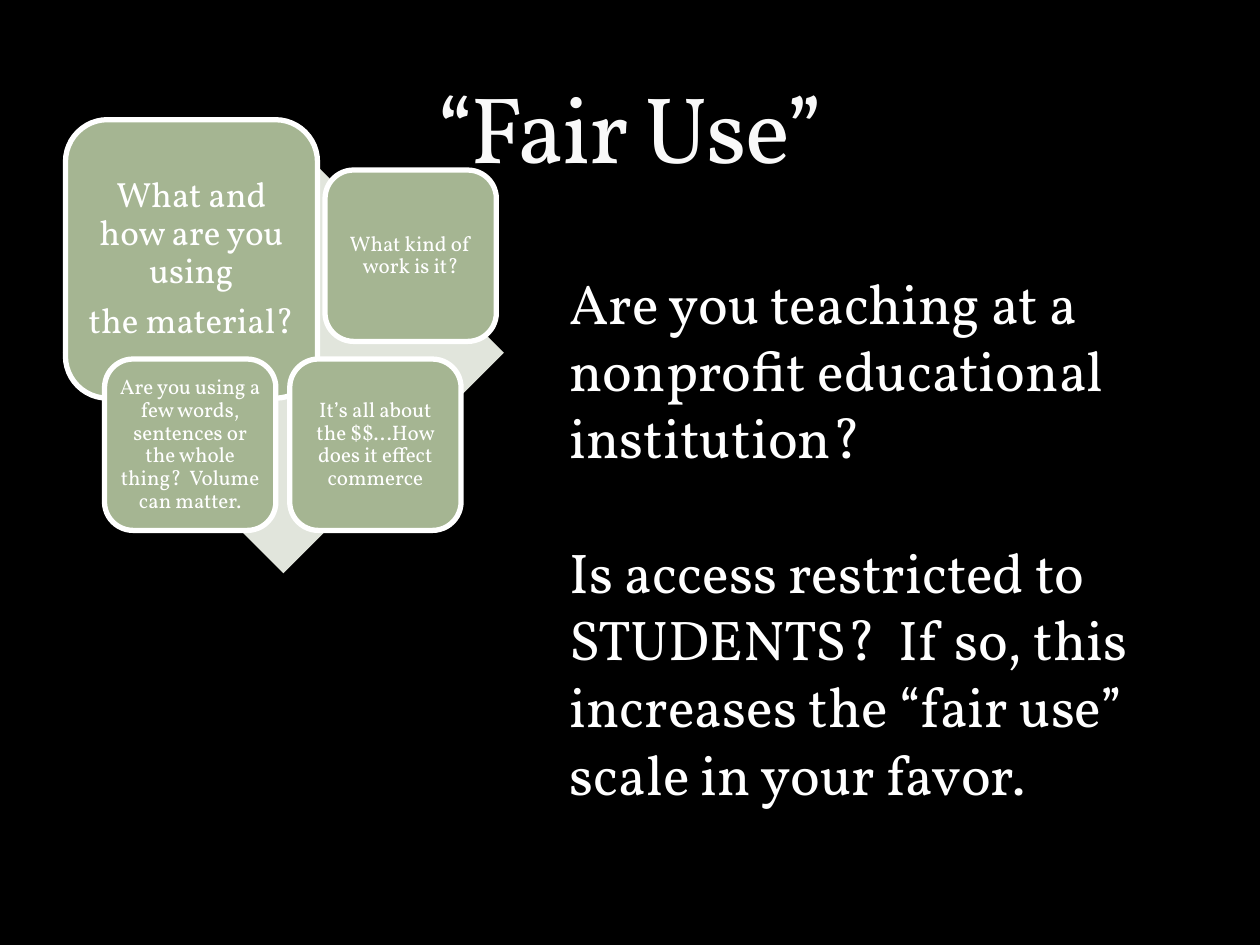
import lxml.etree
import pptx
import pptx.dml.color
import pptx.enum.shapes
import pptx.enum.text
import pptx.oxml.ns
import pptx.util

BLACK = pptx.dml.color.RGBColor(0x00, 0x00, 0x00)
WHITE = pptx.dml.color.RGBColor(0xFF, 0xFF, 0xFF)
OFF_WHITE = pptx.dml.color.RGBColor(0xF9, 0xF9, 0xF9)
SAGE = pptx.dml.color.RGBColor(0xA5, 0xB5, 0x92)
PALE_SAGE = pptx.dml.color.RGBColor(0xE1, 0xE5, 0xDC)

SHAPE = pptx.enum.shapes.MSO_SHAPE
ALIGN = pptx.enum.text.PP_ALIGN
ANCHOR = pptx.enum.text.MSO_ANCHOR


class FairUseSlide:
    font_name = "Vollkorn"
    columns, rows = 10, 7.5

    def __init__(self, deck):
        self.column = deck.slide_width / self.columns
        self.row = deck.slide_height / self.rows
        self.slide = deck.slides.add_slide(deck.slide_layouts[1])
        self.slide.background.fill.solid()
        self.slide.background.fill.fore_color.rgb = BLACK
        self.diagram = self.slide.shapes.add_group_shape()

    def place(self, left, top, width, height):
        return (round(left * self.column), round(top * self.row),
                round(width * self.column), round(height * self.row))

    def set_text(self, frame, paragraphs, size, color, align, anchor):
        frame.text = "\n".join(paragraphs)
        frame.word_wrap = True
        frame.auto_size = pptx.enum.text.MSO_AUTO_SIZE.NONE
        frame.vertical_anchor = anchor
        for paragraph in frame.paragraphs:
            paragraph.alignment = align
            paragraph.space_before = pptx.util.Pt(0)
            paragraph.font.name = self.font_name
            paragraph.font.size = pptx.util.Pt(size)
            paragraph.font.color.rgb = color

    def move(self, placeholder, area):
        (placeholder.left, placeholder.top,
         placeholder.width, placeholder.height) = self.place(*area)

    def title(self, heading, area):
        title = self.slide.shapes.title
        self.move(title, area)
        self.set_text(title.text_frame, [heading], 54, OFF_WHITE,
                      ALIGN.CENTER, ANCHOR.BOTTOM)
        for run in title.text_frame.paragraphs[0].runs:
            run._r.get_or_add_rPr().set("spc", "-100")

    def body(self, questions, area, gap):
        body = self.slide.placeholders[1]
        self.move(body, area)
        self.set_text(body.text_frame, questions, 32, WHITE, ALIGN.LEFT, ANCHOR.TOP)
        for index, paragraph in enumerate(body.text_frame.paragraphs):
            paragraph.space_before = pptx.util.Pt(gap if index else 0)
            properties = paragraph._p.get_or_add_pPr()
            properties.set("marL", "0")
            properties.set("indent", "0")
            no_bullet = lxml.etree.Element(pptx.oxml.ns.qn("a:buNone"))
            properties.find(pptx.oxml.ns.qn("a:defRPr")).addprevious(no_bullet)

    def block(self, preset, area, fill):
        block = self.diagram.shapes.add_shape(preset, *self.place(*area))
        block.shadow.inherit = False
        block.fill.solid()
        block.fill.fore_color.rgb = fill
        block.line.fill.background()
        return block

    def factor(self, paragraphs, area, size, inset):
        factor = self.block(SHAPE.ROUNDED_RECTANGLE, area, SAGE)
        factor.line.color.rgb = WHITE
        factor.line.width = pptx.util.Pt(3)
        frame = factor.text_frame
        frame.margin_left = frame.margin_right = pptx.util.Inches(inset)
        frame.margin_top = frame.margin_bottom = pptx.util.Inches(inset)
        self.set_text(frame, paragraphs, size, WHITE, ALIGN.CENTER, ANCHOR.MIDDLE)
        for paragraph in frame.paragraphs:
            paragraph.line_spacing = 0.9
            paragraph.space_after = pptx.util.Pt(size * 0.35)


def main():
    deck = pptx.Presentation()
    deck.slide_width = pptx.util.Inches(10)
    deck.slide_height = pptx.util.Inches(7.5)
    fair_use = FairUseSlide(deck)

    fair_use.title("“Fair Use”", (0.5, 0.17, 9, 1.33))
    fair_use.block(SHAPE.DIAMOND, (0.5, 1.05, 3.5, 3.5), PALE_SAGE)
    fair_use.factor(["What and how are you using", "the material?"],
                    (0.52, 0.95, 2, 2.21), 20, 0.08)

    side = 1.36
    small_factors = [
        (2.58, 1.35, "What kind of work is it?"),
        (0.83, 2.85, "Are you using a few words, sentences or the whole thing?  Volume can matter."),
        (2.3, 2.85, "It’s all about the $$...How does it effect commerce"),
    ]
    for left, top, question in small_factors:
        fair_use.factor([question], (left, top, side, side), 12, 0.05)

    fair_use.body(
        ["Are you teaching at a nonprofit educational institution?",
         "Is access restricted to STUDENTS?  If so, this increases the “fair use” scale in your favor."],
        (4.42, 2.08, 5.08, 4.41), gap=38.5)
    deck.save("out.pptx")


if __name__ == "__main__":
    main()
